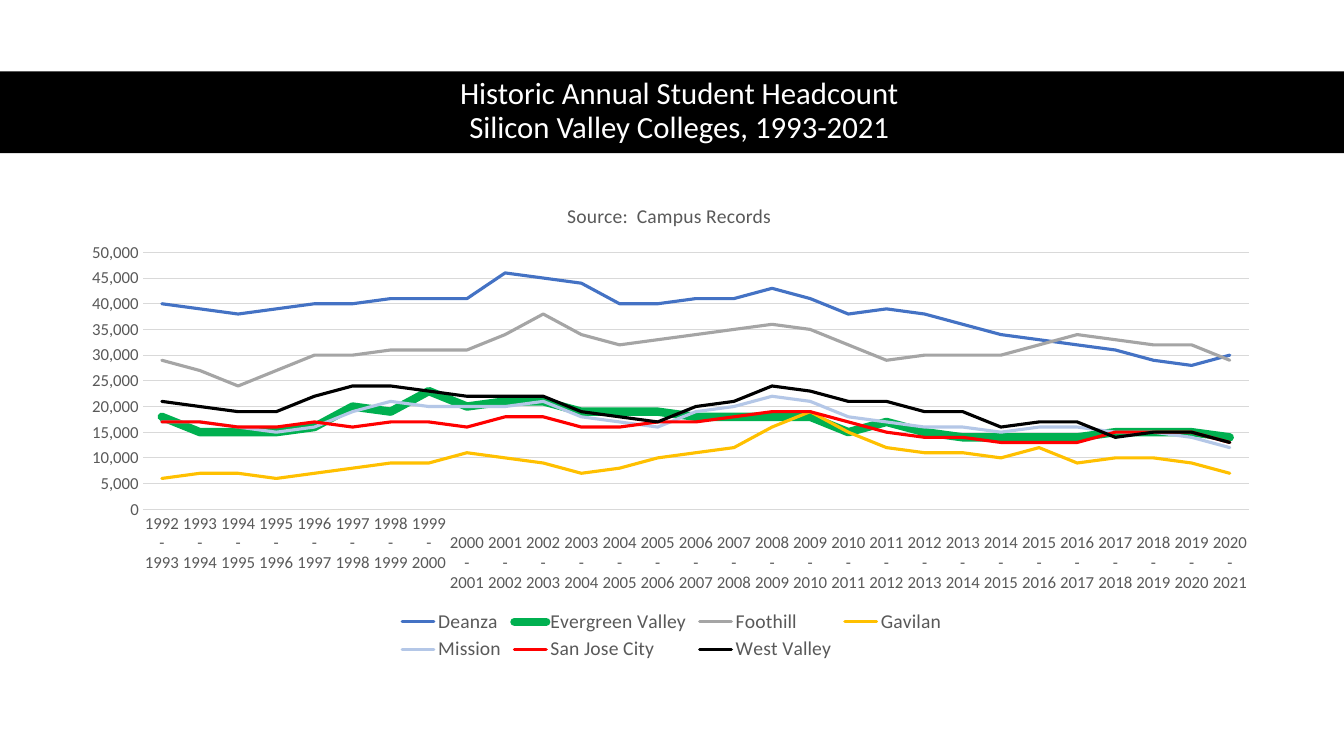
from dataclasses import dataclass

from lxml import etree
from pptx import Presentation
from pptx import util as u
from pptx.chart.data import CategoryChartData
from pptx.dml.color import RGBColor
from pptx.enum import chart as ch, shapes, text
from pptx.oxml.ns import qn

COLORS = {
    "black": "000000",
    "white": "FFFFFF",
    "label": "595959",
    "grid": "D9D9D9",
    "blue": "4472C4",
    "green": "00B050",
    "gray": "A5A5A5",
    "gold": "FFC000",
    "pale": "B4C7E7",
    "red": "FF0000",
}
FONT = "Calibri"


@dataclass
class College:
    name: str
    color: str
    thousands: list[int]
    width: float = 2.25


COLLEGES = [
    College("Deanza", "blue",
            [40, 39, 38, 39, 40, 40, 41, 41, 41, 46, 45, 44, 40, 40, 41,
             41, 43, 41, 38, 39, 38, 36, 34, 33, 32, 31, 29, 28, 30]),
    College("Evergreen Valley", "green",
            [18, 15, 15, 15, 16, 20, 19, 23, 20, 21, 21, 19, 19, 19, 18,
             18, 18, 18, 15, 17, 15, 14, 14, 14, 14, 15, 15, 15, 14], 6),
    College("Foothill", "gray",
            [29, 27, 24, 27, 30, 30, 31, 31, 31, 34, 38, 34, 32, 33, 34,
             35, 36, 35, 32, 29, 30, 30, 30, 32, 34, 33, 32, 32, 29]),
    College("Gavilan", "gold",
            [6, 7, 7, 6, 7, 8, 9, 9, 11, 10, 9, 7, 8, 10, 11,
             12, 16, 19, 15, 12, 11, 11, 10, 12, 9, 10, 10, 9, 7]),
    College("Mission", "pale",
            [17, 17, 16, 15, 16, 19, 21, 20, 20, 20, 21, 18, 17, 16, 19,
             20, 22, 21, 18, 17, 16, 16, 15, 16, 16, 15, 15, 14, 12]),
    College("San Jose City", "red",
            [17, 17, 16, 16, 17, 16, 17, 17, 16, 18, 18, 16, 16, 17, 17,
             18, 19, 19, 17, 15, 14, 14, 13, 13, 13, 15, 15, 15, 13]),
    College("West Valley", "black",
            [21, 20, 19, 19, 22, 24, 24, 23, 22, 22, 22, 19, 18, 17, 20,
             21, 24, 23, 21, 21, 19, 19, 16, 17, 17, 14, 15, 15, 13]),
]


def rgb(name: str) -> RGBColor:
    return RGBColor.from_string(COLORS[name])


def style_font(font, *, size: float, color: str) -> None:
    font.name = FONT
    font.size = u.Pt(size)
    font.bold = False
    font.color.rgb = rgb(color)


def style_line(line, *, color: str, width: float = 0.75) -> None:
    line.color.rgb = rgb(color)
    line.width = u.Pt(width)


def write(p, content: str, *, size: float, color: str) -> None:
    for i, row in enumerate(content.split("\n")):
        if i:
            p.add_line_break()
        r = p.add_run()
        r.text = row
        style_font(r.font, size=size, color=color)


def set_layout(parent, index: int, **values: float | str) -> None:
    for old in parent.findall(qn("c:layout")):
        parent.remove(old)
    layout = etree.Element(qn("c:layout"))
    manual = etree.SubElement(layout, qn("c:manualLayout"))
    for tag, value in values.items():
        etree.SubElement(manual, qn(f"c:{tag}")).set("val", str(value))
    parent.insert(index, layout)


def add_banner(s) -> None:
    sp = s.shapes.add_shape(shapes.MSO_SHAPE.RECTANGLE, 0, u.Cm(1.8),
                            u.Cm(33.87), u.Cm(2.06))
    sp.shadow.inherit = False
    sp.fill.solid()
    sp.fill.fore_color.rgb = rgb("black")
    sp.line.fill.background()

    sp = s.shapes.add_textbox(u.Cm(1.55), u.Cm(1.78), u.Cm(31.14), u.Cm(2.06))
    tf = sp.text_frame
    tf.word_wrap = True
    tf.vertical_anchor = text.MSO_ANCHOR.MIDDLE
    p = tf.paragraphs[0]
    p.alignment = text.PP_ALIGN.CENTER
    p.line_spacing = 0.9
    write(p, "Historic Annual Student Headcount\nSilicon Valley Colleges, 1993-2021",
          size=22, color="white")


def add_headcount_chart(s) -> None:
    data = CategoryChartData(number_format="#,##0")
    data.categories = [f"{' ' if y >= 2000 else ''}{y}-{y + 1}"
                       for y in range(1992, 2021)]
    for college in COLLEGES:
        data.add_series(college.name, [n * 1000 for n in college.thousands])
    chart = s.shapes.add_chart(ch.XL_CHART_TYPE.LINE, u.Cm(1.78), u.Cm(4.65),
                               u.Cm(30.3), u.Cm(12.22), data).chart
    style_font(chart.font, size=10, color="black")
    chart.plots[0].vary_by_categories = False
    for series, college in zip(chart.plots[0].series, COLLEGES):
        series.smooth = False
        style_line(series.format.line, color=college.color, width=college.width)
    for ln in chart.element.iter(qn("a:ln")):
        ln.set("cap", "rnd")

    chart.has_title = True
    write(chart.chart_title.text_frame.paragraphs[0], "Source:  Campus Records",
          size=14, color="label")

    years, counts = chart.category_axis, chart.value_axis
    for axis in (years, counts):
        axis.major_tick_mark = ch.XL_TICK_MARK.NONE
        axis.minor_tick_mark = ch.XL_TICK_MARK.NONE
        style_font(axis.tick_labels.font, size=12, color="label")
    style_line(years.format.line, color="grid")
    body = chart.element.find(".//" + qn("c:catAx")).find(".//" + qn("a:bodyPr"))
    body.set("rot", "-60000000")
    body.set("vert", "horz")
    counts.minimum_scale, counts.maximum_scale = 0, 50000
    counts.major_unit = 5000
    counts.tick_labels.number_format = "#,##0"
    counts.tick_labels.number_format_is_linked = False
    counts.format.line.fill.background()
    counts.has_major_gridlines = True
    style_line(counts.major_gridlines.format.line, color="grid")

    chart.has_legend = True
    chart.legend.position = ch.XL_LEGEND_POSITION.BOTTOM
    chart.legend.include_in_layout = False
    style_font(chart.legend.font, size=14, color="label")

    root = chart.element.find(qn("c:chart"))
    set_layout(root.find(qn("c:title")), 1, xMode="edge", yMode="edge",
               x=0.41, y=0.03)
    set_layout(root.find(qn("c:plotArea")), 0, layoutTarget="inner",
               xMode="edge", yMode="edge", x=0.06, y=0.14, w=0.92, h=0.53)
    set_layout(root.find(qn("c:legend")), 1, xMode="edge", yMode="edge",
               x=0.27, y=0.87, w=0.46, h=0.12)


def main() -> None:
    prs = Presentation()
    prs.slide_width, prs.slide_height = u.Cm(33.87), u.Cm(19.05)
    s = prs.slides.add_slide(prs.slide_layouts[6])
    add_banner(s)
    add_headcount_chart(s)
    prs.save("out.pptx")


if __name__ == "__main__":
    main()
